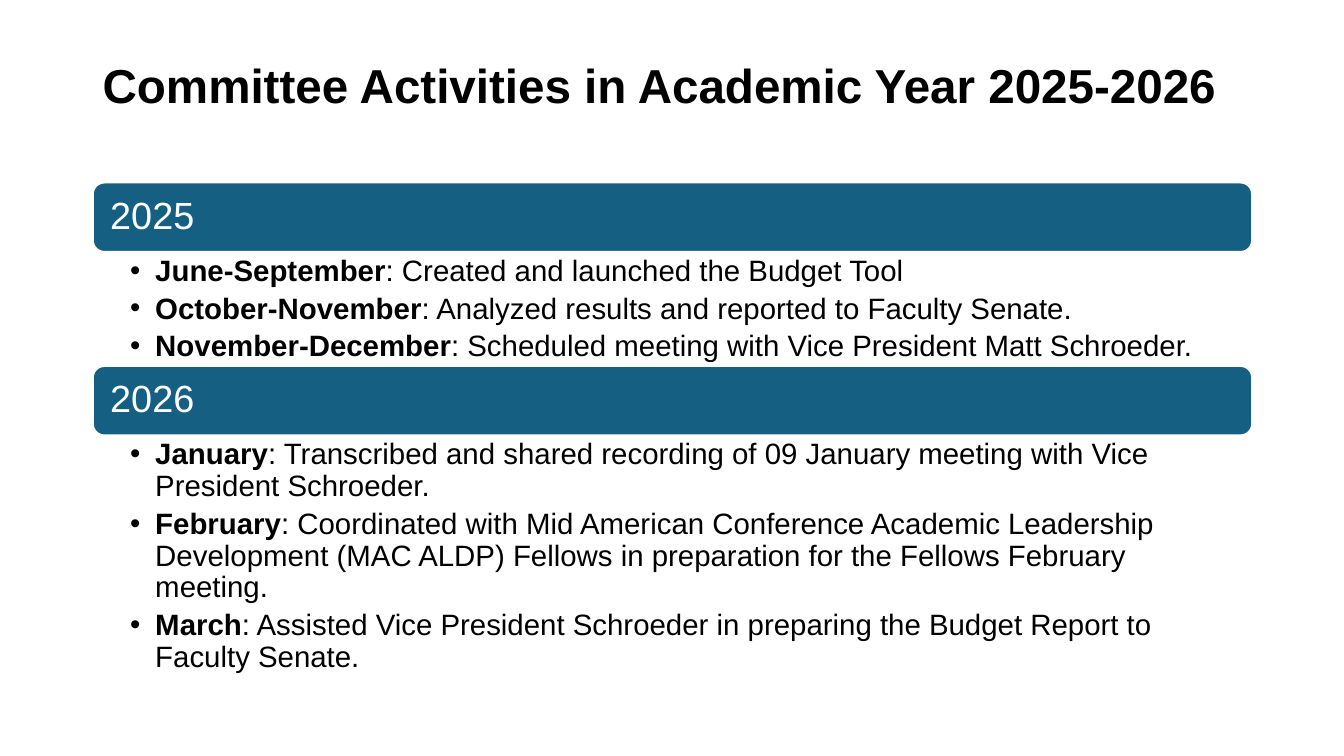
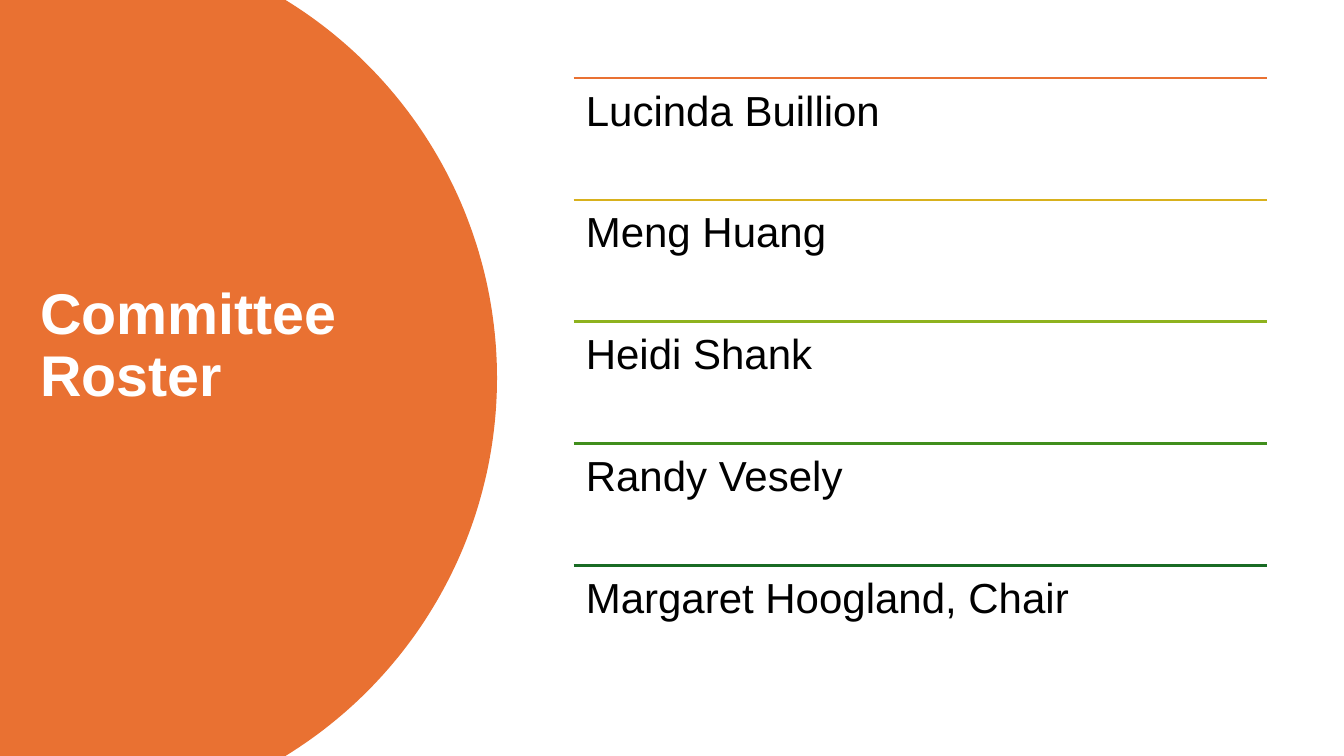
from math import asin, cos, sin

from lxml import etree
from pptx import Presentation
from pptx.dml.color import RGBColor
from pptx.enum.shapes import MSO_CONNECTOR, MSO_SHAPE
from pptx.enum.text import MSO_ANCHOR, PP_ALIGN
from pptx.oxml.ns import qn
from pptx.util import Inches, Pt

FONT = "Arial"
COLORS = {
    "black": "000000",
    "white": "FFFFFF",
    "blue": "156082",
    "orange": "E97132",
    "gold": "D8B11D",
    "lime": "8EB21E",
    "green": "408E1C",
    "forest": "196B24",
}


def rgb(name):
    return RGBColor.from_string(COLORS[name])


def write(sp, paragraphs, size, color, insets=(0.1, 0.05, 0.1, 0.05),
          anchor=MSO_ANCHOR.TOP, bullets=False):
    """Fill a shape with paragraphs, each a list of (text, bold) runs."""
    tf = sp.text_frame
    tf.word_wrap = True
    tf.vertical_anchor = anchor
    tf.margin_left, tf.margin_top, tf.margin_right, tf.margin_bottom = map(Inches, insets)
    for i, runs in enumerate(paragraphs):
        p = tf.add_paragraph() if i else tf.paragraphs[0]
        p.alignment = PP_ALIGN.LEFT
        p.line_spacing = 0.9
        if bullets:
            p.space_after = Pt(0.2 * size)
            pPr = p._p.get_or_add_pPr()
            pPr.set("marL", str(Inches(0.25)))
            pPr.set("indent", str(Inches(-0.25)))
            etree.SubElement(pPr, qn("a:buFont"), typeface=FONT)
            etree.SubElement(pPr, qn("a:buChar"), char="•")
        for text, bold in runs:
            r = p.add_run()
            r.text = text
            r.font.name = FONT
            r.font.size = Pt(size)
            r.font.bold = bold
            r.font.color.rgb = rgb(color)


prs = Presentation()
prs.slide_width = Inches(13.33)
prs.slide_height = Inches(7.5)
blank = prs.slide_layouts[6]

# Slide 1: activities by year
slide = prs.slides.add_slide(blank)
title = slide.shapes.add_textbox(Inches(0.92), Inches(0.4), Inches(11.5), Inches(0.95))
write(title, [[("Committee Activities in Academic Year 2025-2026", True)]],
      34, "black", anchor=MSO_ANCHOR.MIDDLE)

years = [
    ("2025", 1.13, [
        ("June-September", ": Created and launched the Budget Tool"),
        ("October-November", ": Analyzed results and reported to Faculty Senate."),
        ("November-December", ": Scheduled meeting with Vice President Matt Schroeder."),
    ]),
    ("2026", 2.32, [
        ("January", ": Transcribed and shared recording of 09 January meeting with "
                    "Vice President Schroeder."),
        ("February", ": Coordinated with Mid American Conference Academic Leadership "
                     "Development (MAC ALDP) Fellows in preparation for the Fellows "
                     "February meeting."),
        ("March", ": Assisted Vice President Schroeder in preparing the Budget Report "
                  "to Faculty Senate."),
    ]),
]
bar_height = 0.69
top = 1.81
for year, list_height, activities in years:
    bar = slide.shapes.add_shape(MSO_SHAPE.ROUNDED_RECTANGLE, Inches(0.92), Inches(top),
                                 Inches(11.5), Inches(bar_height))
    bar.shadow.inherit = False
    bar.fill.solid()
    bar.fill.fore_color.rgb = rgb("blue")
    bar.line.color.rgb = rgb("white")
    bar.line.width = Pt(1.5)
    write(bar, [[(year, False)]], 27, "white", (0.14, 0.11, 0.14, 0.11), MSO_ANCHOR.MIDDLE)
    top += bar_height

    box = slide.shapes.add_textbox(Inches(0.92), Inches(top), Inches(11.5), Inches(list_height))
    write(box, [[(month, True), (activity, False)] for month, activity in activities],
          21, "black", (0.37, 0.04, 0.21, 0.04), bullets=True)
    top += list_height

# Slide 2: roster
slide = prs.slides.add_slide(blank)
center_x, center_y, radius = 0.53, 3.75, 4.4
half_angle = asin(center_y / radius)
steps = 120
angles = [half_angle * (2 * i / steps - 1) for i in range(steps + 1)]
arc = [(Inches(center_x + radius * cos(a)), Inches(center_y + radius * sin(a))) for a in angles]
builder = slide.shapes.build_freeform(0, 0)
builder.add_line_segments(arc + [(0, Inches(7.5))], close=True)
panel = builder.convert_to_shape()
panel.shadow.inherit = False
panel.fill.solid()
panel.fill.fore_color.rgb = rgb("orange")
panel.line.fill.background()

title = slide.shapes.add_textbox(Inches(0.3), Inches(0.7), Inches(4.43), Inches(5.48))
write(title, [[("Committee Roster", True)]], 41, "white", anchor=MSO_ANCHOR.MIDDLE)

members = [
    ("Lucinda Buillion", "orange"),
    ("Meng Huang", "gold"),
    ("Heidi Shank", "lime"),
    ("Randy Vesely", "green"),
    ("Margaret Hoogland, Chair", "forest"),
]
left, width, row_height = 5.69, 6.88, 1.21
for i, (member, color) in enumerate(members):
    y = Inches(0.77 + i * row_height)
    rule = slide.shapes.add_connector(MSO_CONNECTOR.STRAIGHT, Inches(left), y,
                                      Inches(left + width), y)
    rule.line.color.rgb = rgb(color)
    rule.line.width = Pt(1.5)
    etree.SubElement(rule._element.spPr, qn("a:effectLst"))
    box = slide.shapes.add_textbox(Inches(left), y, Inches(width), Inches(row_height))
    write(box, [[(member, False)]], 30, "black", (0.12, 0.12, 0.12, 0.12))

prs.save("out.pptx")
